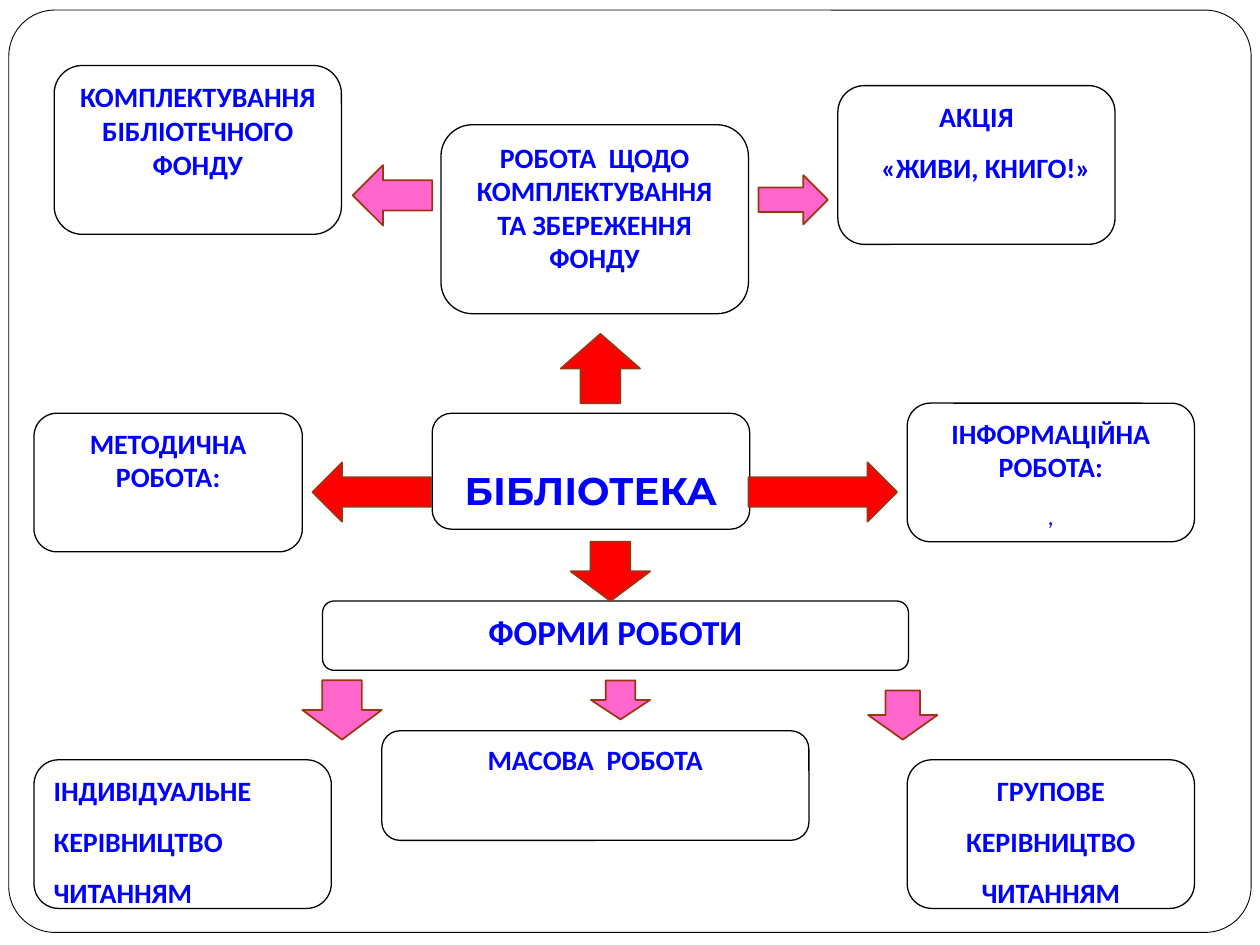
"""Build a one-slide scheme of the areas of library work."""
from dataclasses import dataclass

from pptx import Presentation
from pptx import util as u
from pptx.dml.color import RGBColor
from pptx.enum import shapes, text

SHAPE = shapes.MSO_SHAPE
CENTER, LEFT = text.PP_ALIGN.CENTER, text.PP_ALIGN.LEFT


@dataclass(frozen=True)
class Theme:
    """Colours, fonts and sizes of the scheme."""
    paper: str = "FFFFFF"
    border: str = "000000"
    ink: str = "0000FF"
    main_arrow: str = "FF0000"
    sub_arrow: str = "FF66CC"
    arrow_line: str = "9C3511"
    body_font: str = "Calibri"
    title_font: str = "Montserrat"
    note: int = 14
    body: int = 16
    heading: int = 20
    title: int = 22
    gap: int = 10


class Scheme:
    """Draws the parts of the scheme on one slide."""

    def __init__(self, slide, theme):
        self.s, self.t = slide, theme

    def shape(self, kind, at, fill, line, width):
        """Add a filled and outlined preset shape."""
        sp = self.s.shapes.add_shape(kind, *map(u.Inches, at))
        sp.shadow.inherit = False
        sp.fill.solid()
        sp.fill.fore_color.rgb = RGBColor.from_string(fill)
        sp.line.color.rgb = RGBColor.from_string(line)
        sp.line.width = u.Pt(width)
        return sp

    def frame(self, at, radius):
        """Add the rounded frame round the slide."""
        sp = self.shape(SHAPE.ROUNDED_RECTANGLE, at, self.t.paper, self.t.border, 0.5)
        sp.adjustments[0] = radius

    def box(self, at, lines, size=None, font=None, align=CENTER, top=0.05):
        """Add a box with one paragraph for each line."""
        sp = self.shape(SHAPE.FLOWCHART_ALTERNATE_PROCESS, at,
                        self.t.paper, self.t.border, 0.75)
        tf = sp.text_frame
        tf.word_wrap = True
        tf.vertical_anchor = text.MSO_ANCHOR.TOP
        tf.margin_top = u.Inches(top)
        tf.text = "\n".join(lines)
        for p in tf.paragraphs:
            p.alignment = align
            p.space_after = u.Pt(self.t.gap)
            for r in p.runs:
                r.font.size = u.Pt(size or self.t.body)
                r.font.name = font or self.t.body_font
                r.font.bold = True
                r.font.color.rgb = RGBColor.from_string(self.t.ink)
        return tf

    def arrow(self, kind, at, fill, rotation=0):
        """Add a block arrow."""
        sp = self.shape(kind, at, fill, self.t.arrow_line, 1)
        sp.rotation = rotation


def main():
    """Build and save the slide."""
    prs = Presentation()
    prs.slide_width, prs.slide_height = u.Inches(10), u.Inches(7.5)
    t = Theme()
    d = Scheme(prs.slides.add_slide(prs.slide_layouts[6]), t)

    d.frame((0.07, 0.08, 9.86, 7.32), 0.05)
    d.box((3.43, 3.28, 2.52, 0.92), ["БІБЛІОТЕКА"], t.title, t.title_font, top=0.38)
    d.box((0.43, 0.52, 2.28, 1.34), ["КОМПЛЕКТУВАННЯ БІБЛІОТЕЧНОГО ФОНДУ"])
    d.box((3.5, 0.99, 2.44, 1.5), ["РОБОТА  ЩОДО КОМПЛЕКТУВАННЯ ТА ЗБЕРЕЖЕННЯ ФОНДУ"])
    campaign = d.box((6.65, 0.68, 2.2, 1.26), ["АКЦІЯ", "«ЖИВИ, КНИГО!»"])
    campaign.paragraphs[1]._p.get_or_add_pPr().set("marL", str(u.Inches(0.15)))
    d.box((0.27, 3.28, 2.13, 1.1), ["МЕТОДИЧНА РОБОТА:"])
    information = d.box((7.2, 3.2, 2.28, 1.1), ["ІНФОРМАЦІЙНА РОБОТА:", ","])
    comma = information.paragraphs[1].runs[0].font
    comma.size, comma.bold = u.Pt(t.note), False
    d.box((2.56, 4.77, 4.65, 0.55), ["ФОРМИ РОБОТИ"], t.heading)
    guidance = ["КЕРІВНИЦТВО", "ЧИТАННЯМ"]
    d.box((0.27, 6.03, 2.36, 1.18), ["ІНДИВІДУАЛЬНЕ", *guidance], align=LEFT)
    d.box((3.03, 5.8, 3.39, 0.87), ["МАСОВА  РОБОТА"])
    d.box((7.2, 6.03, 2.28, 1.18), ["ГРУПОВЕ", *guidance])

    down, right = SHAPE.DOWN_ARROW, SHAPE.RIGHT_ARROW
    for kind, at, fill, rotation in (
        (down, (4.53, 4.3, 0.63, 0.47), t.main_arrow, 0),
        (down, (4.69, 5.4, 0.47, 0.31), t.sub_arrow, 0),
        (right, (5.94, 3.67, 1.18, 0.47), t.main_arrow, 0),
        (right, (2.48, 3.67, 0.94, 0.47), t.main_arrow, 180),
        (down, (6.89, 5.48, 0.55, 0.39), t.sub_arrow, 0),
        (down, (2.4, 5.4, 0.63, 0.47), t.sub_arrow, 0),
        (down, (4.45, 2.65, 0.63, 0.55), t.main_arrow, 180),
        (right, (6.02, 1.39, 0.55, 0.39), t.sub_arrow, 0),
        (right, (2.8, 1.31, 0.63, 0.48), t.sub_arrow, 180),
    ):
        d.arrow(kind, at, fill, rotation)

    prs.save("out.pptx")


if __name__ == "__main__":
    main()
